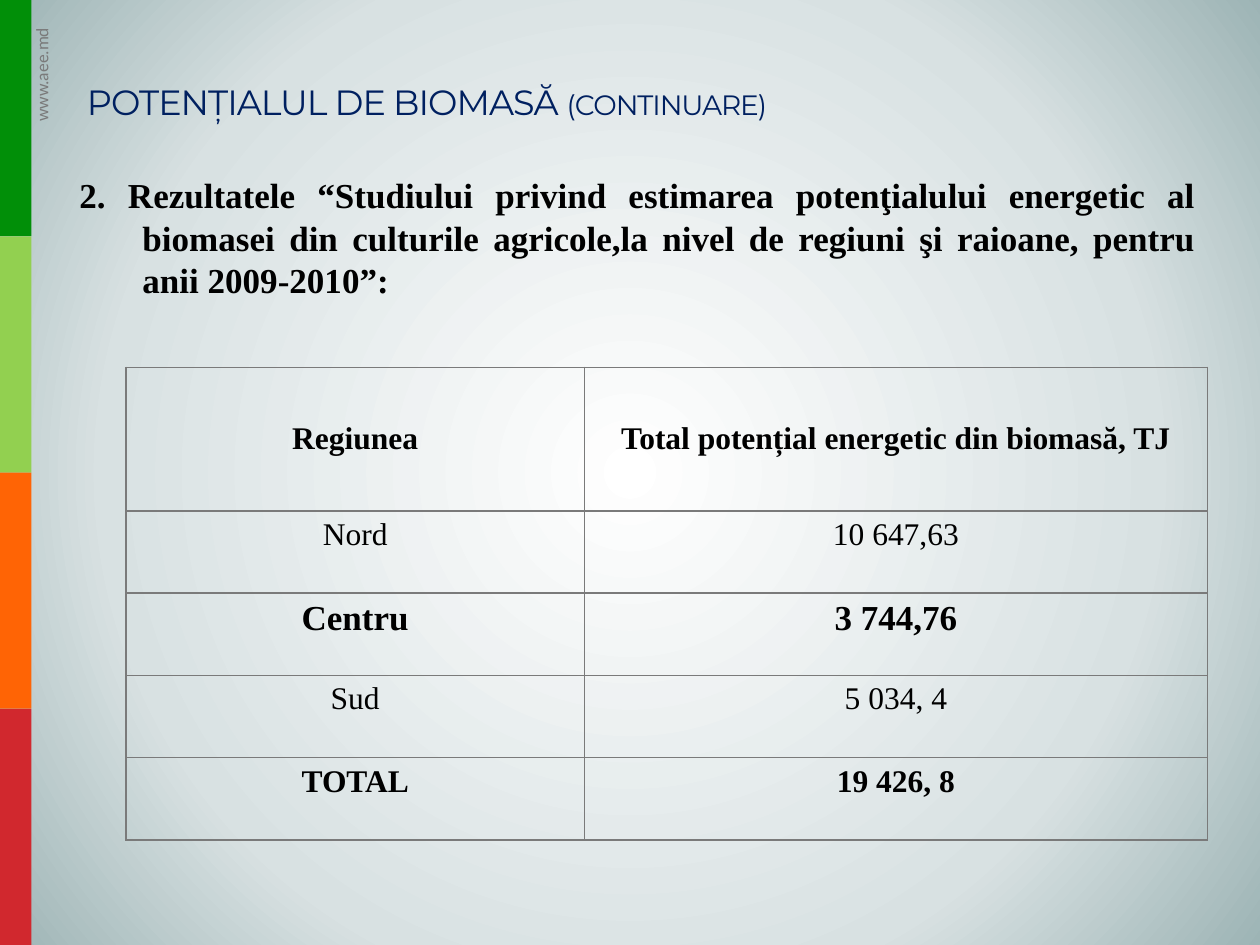
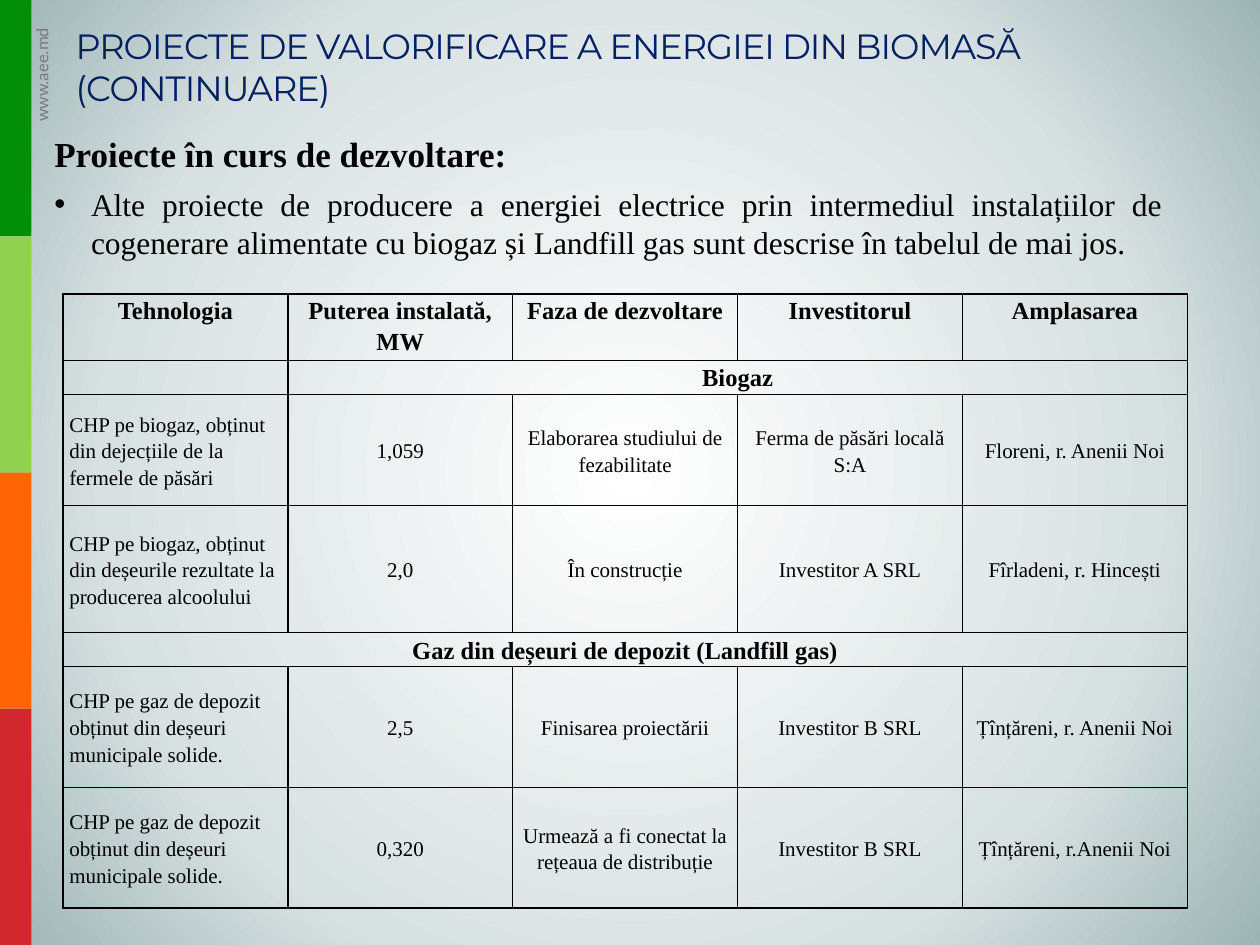
"""Builds two slides on biomass potential and biomass energy projects."""
import lxml.etree
import pptx
import pptx.dml.color
import pptx.enum.shapes
import pptx.enum.text
import pptx.oxml
import pptx.oxml.ns
import pptx.util

Pt = pptx.util.Pt
ALIGN = pptx.enum.text.PP_ALIGN
ANCHOR = pptx.enum.text.MSO_ANCHOR
qn = pptx.oxml.ns.qn

COLORS = {
    "green": "018F08",
    "lime": "92D050",
    "orange": "FF6405",
    "red": "D1282E",
    "gray": "7A7A7A",
    "navy": "002060",
    "black": "000000",
    "center": "FFFFFF",
    "middle": "D8E1E2",
    "edge": "9DB4B5",
}
BANDS = ("green", "lime", "orange", "red")
BAND_WIDTH, BAND_HEIGHT = 18, 135
SERIF = "Times New Roman"
TITLE_FORMAT = {"font": "Montserrat", "color": "navy", "spacing": -0.6}

REGIONS = [
    ("Regiunea", "Total potențial energetic din biomasă, TJ"),
    ("Nord", "10 647,63"),
    ("Centru", "3 744,76"),
    ("Sud", "5 034, 4"),
    ("TOTAL", "19 426, 8"),
]
LANDFILL_PLANT = "CHP pe gaz de depozit obținut din deșeuri municipale solide."
PROJECTS = [
    ("Tehnologia", "Puterea instalată, MW", "Faza de dezvoltare", "Investitorul", "Amplasarea"),
    ("", "Biogaz", "", "", ""),
    ("CHP pe biogaz, obținut din dejecțiile de la fermele de păsări", "1,059",
     "Elaborarea studiului de fezabilitate", "Ferma de păsări locală S:A",
     "Floreni, r. Anenii Noi"),
    ("CHP pe biogaz, obținut din deșeurile rezultate la producerea alcoolului", "2,0",
     "În construcție", "Investitor A SRL", "Fîrladeni, r. Hincești"),
    ("Gaz din deșeuri de depozit (Landfill gas)", "", "", "", ""),
    (LANDFILL_PLANT, "2,5", "Finisarea proiectării", "Investitor B SRL",
     "Țînțăreni, r. Anenii Noi"),
    (LANDFILL_PLANT, "0,320", "Urmează a fi conectat la rețeaua de distribuție",
     "Investitor B SRL", "Țînțăreni, r.Anenii Noi"),
]
SECTION_ROWS = (0, 1, 4)


def rgb(name):
    return pptx.dml.color.RGBColor.from_string(COLORS[name])


def add_text(para, text, size=18, font=SERIF, color="black", bold=False, spacing=0):
    if not text:
        end = lxml.etree.SubElement(para._p, qn("a:endParaRPr"))
        end.set("sz", str(size * 100))
        return
    span = para.add_run()
    span.text = text
    span.font.size = Pt(size)
    span.font.name = font
    span.font.bold = bold
    span.font.color.rgb = rgb(color)
    if spacing:
        span._r.get_or_add_rPr().set("spc", str(round(spacing * 100)))


def place(shape, left, top, width, height):
    shape.left, shape.top = Pt(left), Pt(top)
    shape.width, shape.height = Pt(width), Pt(height)


def format_list_item(para, indent, bullet=None):
    para.alignment = ALIGN.JUSTIFY
    para.space_before = Pt(0)
    properties = para._p.get_or_add_pPr()
    properties.set("marL", str(Pt(indent)))
    properties.set("indent", str(-Pt(indent)))
    if bullet:
        lxml.etree.SubElement(properties, qn("a:buFont")).set("typeface", "Arial")
        lxml.etree.SubElement(properties, qn("a:buChar")).set("char", bullet)
    else:
        lxml.etree.SubElement(properties, qn("a:buNone"))


def set_background(master):
    fill = master.background.fill
    fill.gradient()
    gradient = master.background._cSld.find(".//" + qn("a:gradFill"))
    stops = "".join(
        f'<a:gs pos="{position * 1000}"><a:srgbClr val="{COLORS[name]}"/></a:gs>'
        for position, name in ((0, "center"), (67, "middle"), (100, "edge"))
    )
    radial = pptx.oxml.parse_xml(
        f'<a:gradFill {pptx.oxml.ns.nsdecls("a")} rotWithShape="1"><a:gsLst>{stops}</a:gsLst>'
        '<a:path path="circle"><a:fillToRect l="50000" t="50000" r="50000" b="50000"/></a:path>'
        "</a:gradFill>"
    )
    gradient.getparent().replace(gradient, radial)


def add_band(page, name, position):
    band = page.shapes.add_shape(
        pptx.enum.shapes.MSO_SHAPE.RECTANGLE,
        0, Pt(position * BAND_HEIGHT), Pt(BAND_WIDTH), Pt(BAND_HEIGHT),
    )
    band.shadow.inherit = False
    band.fill.solid()
    band.fill.fore_color.rgb = rgb(name)
    band.line.fill.background()
    return band


def add_site_label(page):
    box = page.shapes.add_textbox(Pt(-11.5), Pt(31.7), Pt(70.5), Pt(19.4))
    box.rotation = 270
    box.text_frame.word_wrap = False
    add_text(box.text_frame.paragraphs[0], "www.aee.md", size=10, font="Calibri", color="gray")
    return box


def decorate_layout(layout, page):
    for placeholder in list(layout.placeholders):
        if placeholder.placeholder_format.idx >= 10:
            layout.shapes.element.remove(placeholder.element)
    parts = [add_band(page, name, position) for position, name in enumerate(BANDS)]
    parts.append(add_site_label(page))
    for part in parts:
        layout.shapes.element.append(part.element)


def fill_title(page, spans, bounds):
    title = page.shapes.title
    place(title, *bounds)
    frame = title.text_frame
    frame.auto_size = pptx.enum.text.MSO_AUTO_SIZE.NONE
    frame.vertical_anchor = ANCHOR.BOTTOM
    para = frame.paragraphs[0]
    para.alignment = ALIGN.LEFT
    for text, size in spans:
        add_text(para, text, size=size, **TITLE_FORMAT)


def prepare_body(page, bounds):
    body = page.placeholders[1]
    place(body, *bounds)
    body.text_frame.auto_size = pptx.enum.text.MSO_AUTO_SIZE.NONE
    return body.text_frame


def set_borders(cell, color):
    properties = cell._tc.get_or_add_tcPr()
    for side in ("lnL", "lnR", "lnT", "lnB"):
        properties.append(pptx.oxml.parse_xml(
            f'<a:{side} {pptx.oxml.ns.nsdecls("a")} w="{Pt(1)}"><a:solidFill>'
            f'<a:srgbClr val="{COLORS[color]}"/></a:solidFill></a:{side}>'
        ))


def add_grid(page, left, top, widths, heights, border):
    table = page.shapes.add_table(
        len(heights), len(widths), Pt(left), Pt(top), Pt(sum(widths)), Pt(sum(heights))
    ).table
    table.first_row = table.horz_banding = False
    for column, width in zip(table.columns, widths):
        column.width = Pt(width)
    for row, height in zip(table.rows, heights):
        row.height = Pt(height)
    for cell in table.iter_cells():
        set_borders(cell, border)
        cell.fill.background()
    return table


def write_cell(cell, text, anchor, align=ALIGN.CENTER, line_spacing=None, **text_format):
    cell.vertical_anchor = anchor
    para = cell.text_frame.paragraphs[0]
    para.alignment = align
    para.line_spacing = line_spacing
    add_text(para, text, **text_format)


def build_potential(page):
    fill_title(page, [("POTENȚIALUL DE BIOMASĂ ", 20), ("(CONTINUARE)", 16)],
               (42.5, 41.8, 545.8, 31.7))
    para = prepare_body(page, (38.2, 95.8, 652.3, 80)).paragraphs[0]
    format_list_item(para, 36)
    add_text(para, "2. Rezultatele “Studiului privind estimarea potenţialului energetic al "
             "biomasei din culturile agricole,la nivel de regiuni şi raioane, pentru "
             "anii 2009-2010”:", size=20, bold=True)

    table = add_grid(page, 72, 210, (262, 356), (82, 47, 47, 47, 47), "gray")
    for row, values in enumerate(REGIONS):
        anchor = ANCHOR.TOP if row else ANCHOR.MIDDLE
        for column, text in enumerate(values):
            write_cell(table.cell(row, column), text, anchor,
                       size=20 if values[0] == "Centru" else 18, bold=row in (0, 2, 4))


def build_projects(page):
    fill_title(page, [("PROIECTE DE VALORIFICARE A ENERGIEI DIN BIOMASĂ (CONTINUARE)", 20)],
               (36, 10.1, 558, 55.4))
    frame = prepare_body(page, (23.8, 72, 648, 81.4))
    heading = frame.paragraphs[0]
    format_list_item(heading, 21)
    add_text(heading, "Proiecte în curs de dezvoltare:", size=20, bold=True)
    item = frame.add_paragraph()
    format_list_item(item, 21, bullet="•")
    add_text(item, "Alte proiecte de producere a energiei electrice prin intermediul "
             "instalațiilor de cogenerare alimentate cu biogaz și Landfill gas sunt "
             "descrise în tabelul de mai jos.")
    heading.space_after = item.space_after = Pt(6)

    table = add_grid(page, 36, 168, [128.5] * 5, (38, 19.5, 63.5, 72.5, 19.5, 69, 69), "black")
    for row, values in enumerate(PROJECTS):
        section = row in SECTION_ROWS
        for column, text in enumerate(values):
            cell = table.cell(row, column)
            cell.margin_left = cell.margin_right = Pt(3.6)
            cell.margin_top = cell.margin_bottom = 0
            write_cell(cell, text, ANCHOR.TOP if row < 2 else ANCHOR.MIDDLE,
                       align=ALIGN.CENTER if section or column else ALIGN.LEFT,
                       line_spacing=1.15, size=14 if section else 12, bold=section)
    table.cell(1, 1).merge(table.cell(1, 4))
    table.cell(4, 0).merge(table.cell(4, 4))


def main():
    deck = pptx.Presentation()
    deck.slide_width, deck.slide_height = Pt(720), Pt(540)
    layout = deck.slide_layouts[1]
    set_background(deck.slide_master)
    potential, projects = [deck.slides.add_slide(layout) for _ in range(2)]
    decorate_layout(layout, potential)
    build_potential(potential)
    build_projects(projects)
    deck.save("out.pptx")


if __name__ == "__main__":
    main()
